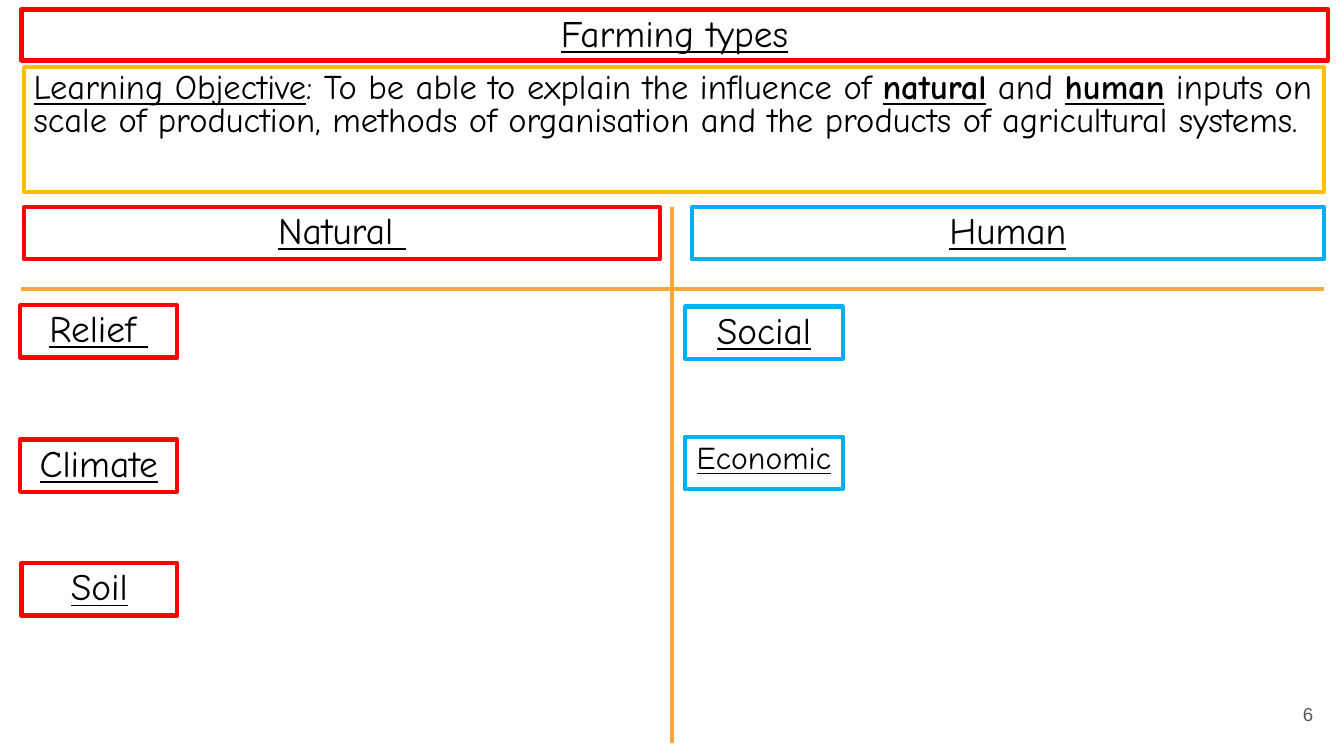
import pptx
import pptx.util
import pptx.dml.color
import pptx.enum.shapes
import pptx.enum.text
import pptx.oxml.ns
import lxml.etree

Inches = pptx.util.Inches
Pt = pptx.util.Pt
ALIGN = pptx.enum.text.PP_ALIGN
ANCHOR = pptx.enum.text.MSO_ANCHOR
COLORS = {"white": "FFFFFF", "black": "000000", "red": "FF0000", "yellow": "FFC000",
          "blue": "00B0F0", "orange": "FEA83A", "grey": "595959"}


def rgb(name):
    return pptx.dml.color.RGBColor.from_string(COLORS[name])


def format_box(shape, color, runs, size, align=ALIGN.CENTER, spacing=0.9,
               space_before=0.2, anchor=ANCHOR.TOP):
    """Outline a box and fill it with runs of (text, underlined, bold)."""
    shape.line.color.rgb = rgb(color)
    shape.line.width = Pt(2.25)
    frame = shape.text_frame
    frame.word_wrap = True
    frame.auto_size = pptx.enum.text.MSO_AUTO_SIZE.NONE
    frame.vertical_anchor = anchor
    frame.margin_left = frame.margin_right = Inches(0.07)
    frame.margin_top = frame.margin_bottom = Inches(0.04)
    paragraph = frame.paragraphs[0]
    paragraph.alignment = align
    paragraph.line_spacing = spacing
    paragraph.space_before = Pt(size * space_before)
    for text, underlined, bold in runs:
        run = paragraph.add_run()
        run.text = text
        run.font.name = "Comic Neue"
        run.font.size = Pt(size)
        run.font.underline = underlined
        run.font.bold = bold
        run.font.color.rgb = rgb("black")


# Widescreen slide, 16:9
presentation = pptx.Presentation()
presentation.slide_width = Inches(10)
presentation.slide_height = Inches(10 * 9 / 16)
slide = presentation.slides.add_slide(presentation.slide_layouts[5])

# Title
title = slide.shapes.title
title.left, title.top = Inches(0.16), Inches(0.07)
title.width, title.height = Inches(9.72), Inches(0.38)
title.fill.solid()
title.fill.fore_color.rgb = rgb("white")
format_box(title, "red", [("Farming types", True, False)], 20,
           space_before=0, anchor=ANCHOR.MIDDLE)

# Learning objective
objective = slide.shapes.add_shape(pptx.enum.shapes.MSO_SHAPE.RECTANGLE, Inches(0.18),
                                   Inches(0.5), Inches(9.67), Inches(0.93))
objective.fill.background()
objective.shadow.inherit = False
format_box(objective, "yellow", [
    ("Learning Objective", True, False),
    (": To be able to explain the influence of ", False, False),
    ("natural", True, True),
    (" and ", False, False),
    ("human", True, True),
    (" inputs on scale of production, methods of organisation and the products "
     "of agricultural systems.", False, False),
], 18.5, align=ALIGN.LEFT, spacing=0.8)

# Dividers between the columns and under the headings
for x1, y1, x2, y2 in [(5, 1.54, 5, 5.53), (9.85, 2.15, 0.16, 2.15)]:
    divider = slide.shapes.add_connector(pptx.enum.shapes.MSO_CONNECTOR.STRAIGHT,
                                         Inches(x1), Inches(y1), Inches(x2), Inches(y2))
    divider.line.color.rgb = rgb("orange")
    divider.line.width = Pt(2)
    lxml.etree.SubElement(divider.element.spPr, pptx.oxml.ns.qn("a:effectLst"))

# Column headings and input labels: text, left, top, width, color, size
labels = [
    ("Natural ", 0.18, 1.54, 4.73, "red", 20),
    ("Human", 5.15, 1.54, 4.7, "blue", 20),
    ("Relief ", 0.15, 2.27, 1.17, "red", 20),
    ("Climate", 0.15, 3.27, 1.17, "red", 20),
    ("Soil", 0.16, 4.19, 1.16, "red", 20),
    ("Social", 5.1, 2.28, 1.17, "blue", 20),
    ("Economic", 5.1, 3.25, 1.17, "blue", 17),
]
for text, left, top, width, color, size in labels:
    label = slide.shapes.add_shape(pptx.enum.shapes.MSO_SHAPE.RECTANGLE, Inches(left),
                                   Inches(top), Inches(width), Inches(0.39))
    label.fill.background()
    label.shadow.inherit = False
    format_box(label, color, [(text, True, False)], size)

# Slide number
number = slide.shapes.add_textbox(Inches(9.27), Inches(5.1), Inches(0.6), Inches(0.43))
frame = number.text_frame
frame.text = "6"
frame.word_wrap = True
frame.vertical_anchor = ANCHOR.MIDDLE
frame.margin_left = frame.margin_right = Inches(0.1)
frame.margin_top = frame.margin_bottom = Inches(0.1)
paragraph = frame.paragraphs[0]
paragraph.alignment = ALIGN.RIGHT
font = paragraph.runs[0].font
font.name = "Arial"
font.size = Pt(10)
font.color.rgb = rgb("grey")

presentation.save("out.pptx")
